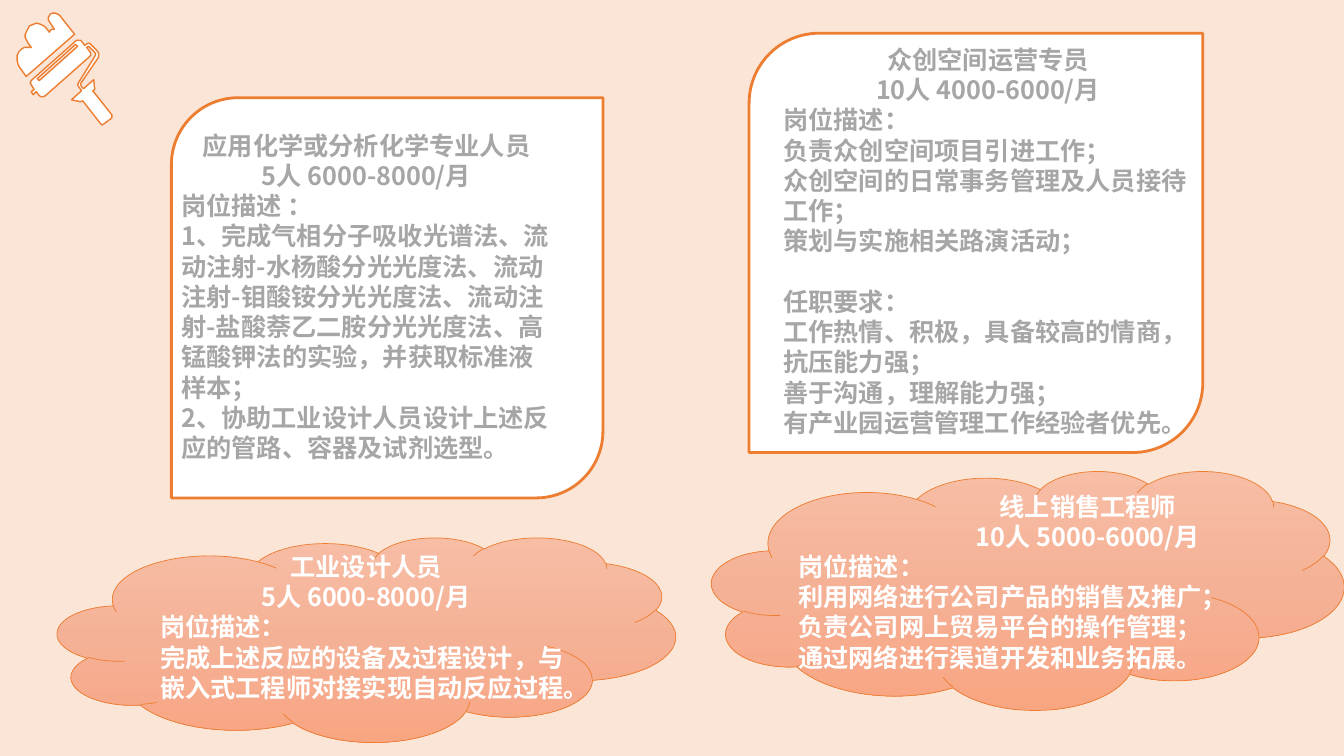
from copy import deepcopy
from dataclasses import dataclass

from pptx import Presentation
from pptx.dml.color import RGBColor
from pptx.enum.shapes import MSO_SHAPE as SHAPE
from pptx.enum.text import MSO_AUTO_SIZE as AUTO, PP_ALIGN as ALIGN
from pptx.oxml.ns import qn
from pptx.util import Inches, Pt

FONT = "Noto Sans CJK SC"
LINE_PITCH = 21.6
COLORS = {"bg": "FBE5D6", "white": "FFFFFF", "grey": "A6A6A6", "orange": "ED7D31"}
CLOUD_STOPS = ("F7BDA5", "F5B196", "F8A582")

ROLLER_CONTOURS = (
    ((81, 41), (84, 45), (87, 43), (89, 43), (91, 45), (96, 50), (98, 53),
     (98, 56), (97, 58), (80, 83), (80, 84), (81, 86), (83, 88), (93, 79),
     (94, 89), (92, 90), (111, 114), (111, 117), (103, 123), (101, 124),
     (100, 123), (82, 100), (80, 101), (71, 99), (81, 90), (78, 86),
     (77, 84), (78, 82), (94, 56), (95, 54), (94, 52), (90, 48), (88, 46),
     (86, 47), (89, 51), (90, 53), (90, 55), (88, 57), (45, 95), (43, 96),
     (41, 96), (39, 95), (36, 91), (33, 94), (31, 91), (34, 89), (31, 84),
     (30, 82), (31, 80), (32, 79), (76, 40), (78, 40), (80, 40)),
    ((31, 47), (28, 47), (24, 47), (21, 49), (19, 51), (17, 55), (17, 60),
     (18, 64), (19, 66), (26, 76), (74, 34), (59, 15), (57, 14), (55, 13),
     (52, 13), (50, 14), (48, 17), (48, 20), (50, 23), (54, 29), (52, 29),
     (50, 30), (49, 32), (46, 28), (44, 26), (40, 24), (36, 23), (31, 25),
     (29, 26), (27, 30), (25, 34), (25, 37), (26, 39), (28, 43)),
    ((37, 78), (39, 80), (77, 46), (75, 44)),
)


@dataclass
class Box:
    left: float
    top: float
    width: float
    height: float

    def emu(self) -> tuple:
        """Return the box as lengths for python-pptx."""
        return tuple(map(Inches, (self.left, self.top, self.width, self.height)))


@dataclass
class Job:
    cloud: bool
    frame: Box
    text: Box
    heading: tuple[str, str]
    body: tuple[str, ...]


JOBS = (
    Job(False, Box(1.7, 0.97, 4.28, 3.97), Box(1.7, 1.24, 3.87, 3.43),
        ("应用化学或分析化学专业人员", "5人 6000-8000/月"),
        ("岗位描述 ：",
         "1、完成气相分子吸收光谱法、流动注射-水杨酸分光光度法、流动注射-钼酸铵分光光度法、"
         "流动注射-盐酸萘乙二胺分光光度法、高锰酸钾法的实验，并获取标准液样本；",
         "2、协助工业设计人员设计上述反应的管路、容器及试剂选型。")),
    Job(False, Box(7.43, 0.33, 4.5, 4.16), Box(7.67, 0.39, 4.26, 4.04),
        ("众创空间运营专员", "10人 4000-6000/月"),
        ("岗位描述：", "负责众创空间项目引进工作；",
         "众创空间的日常事务管理及人员接待工作；", "策划与实施相关路演活动；",
         "任职要求：", "工作热情、积极，具备较高的情商，抗压能力强；",
         "善于沟通，理解能力强；", "有产业园运营管理工作经验者优先。")),
    Job(True, Box(0.57, 5.33, 6.13, 2.03), Box(1.49, 5.42, 4.28, 1.61),
        ("工业设计人员", "5人 6000-8000/月"),
        ("岗位描述：", "完成上述反应的设备及过程设计，与嵌入式工程师对接实现自动反应过程。")),
    Job(True, Box(7.06, 4.67, 6.27, 2.37), Box(7.82, 4.82, 5.94, 2.22),
        ("线上销售工程师", "10人 5000-6000/月"),
        ("岗位描述：", "利用网络进行公司产品的销售及推广；",
         "负责公司网上贸易平台的操作管理；", "通过网络进行渠道开发和业务拓展。")),
)


def rgb(name: str) -> RGBColor:
    """Look up a named colour."""
    return RGBColor.from_string(COLORS[name])


def style_shape(sp, line_width: float) -> None:
    """Give a shape a white fill, an orange outline and no shadow."""
    sp.shadow.inherit = False
    sp.fill.solid()
    sp.fill.fore_color.rgb = rgb("white")
    sp.line.color.rgb = rgb("orange")
    sp.line.width = Pt(line_width)


def fill_gradient(sp) -> None:
    """Fill a cloud with the three-stop gradient from top to bottom."""
    sp.fill.gradient()
    sp.fill.gradient_angle = 270
    stops = next(sp._element.spPr.iter(qn("a:gsLst")))
    stops.insert(1, deepcopy(stops[0]))
    for i, (stop, color) in enumerate(zip(sp.fill.gradient_stops, CLOUD_STOPS)):
        stop.position = i / 2
        stop.color.rgb = RGBColor.from_string(color)


def add_paragraph(p, text: str, *, color: str, align=ALIGN.LEFT, before: float = 0) -> None:
    """Write one bold paragraph."""
    p.alignment = align
    p.line_spacing = Pt(LINE_PITCH)
    p.space_before = Pt(before)
    r = p.add_run()
    r.text = text
    r.font.size = Pt(18)
    r.font.bold = True
    r.font.name = FONT
    r.font.color.rgb = rgb(color)
    r._r.get_or_add_rPr().find(qn("a:latin")).addnext(
        r._r.makeelement(qn("a:ea"), {"typeface": FONT}))


def draw_frame(s, job: Job) -> None:
    """Draw the card or cloud behind a job."""
    kind = SHAPE.CLOUD if job.cloud else SHAPE.ROUND_2_DIAG_RECTANGLE
    sp = s.shapes.add_shape(kind, *job.frame.emu())
    style_shape(sp, 0.5 if job.cloud else 2)
    if job.cloud:
        fill_gradient(sp)


def draw_text(s, job: Job) -> None:
    """Write a job's centred heading and its description."""
    tf = s.shapes.add_textbox(*job.text.emu()).text_frame
    tf.word_wrap = True
    tf.auto_size = AUTO.SHAPE_TO_FIT_TEXT
    color = "white" if job.cloud else "grey"
    for i, text in enumerate(job.heading + job.body):
        p = tf.add_paragraph() if i else tf.paragraphs[0]
        add_paragraph(p, text, color=color,
                      align=ALIGN.CENTER if i < len(job.heading) else ALIGN.LEFT,
                      before=LINE_PITCH if text == "任职要求：" else 0)


def draw_roller(s) -> None:
    """Draw the paint roller icon."""
    first, *others = ROLLER_CONTOURS
    builder = s.shapes.build_freeform(*first[0], scale=Inches(0.01))
    builder.add_line_segments(first[1:], close=True)
    for contour in others:
        builder.move_to(*contour[0])
        builder.add_line_segments(contour[1:], close=True)
    style_shape(builder.convert_to_shape(), 1)


def main() -> None:
    """Build and save the slide."""
    prs = Presentation()
    prs.slide_width, prs.slide_height = Inches(13.33), Inches(7.5)
    s = prs.slides.add_slide(prs.slide_layouts[6])
    s.background.fill.solid()
    s.background.fill.fore_color.rgb = rgb("bg")
    draw_roller(s)
    for job in JOBS:
        draw_frame(s, job)
        draw_text(s, job)
    prs.save("out.pptx")


if __name__ == "__main__":
    main()
